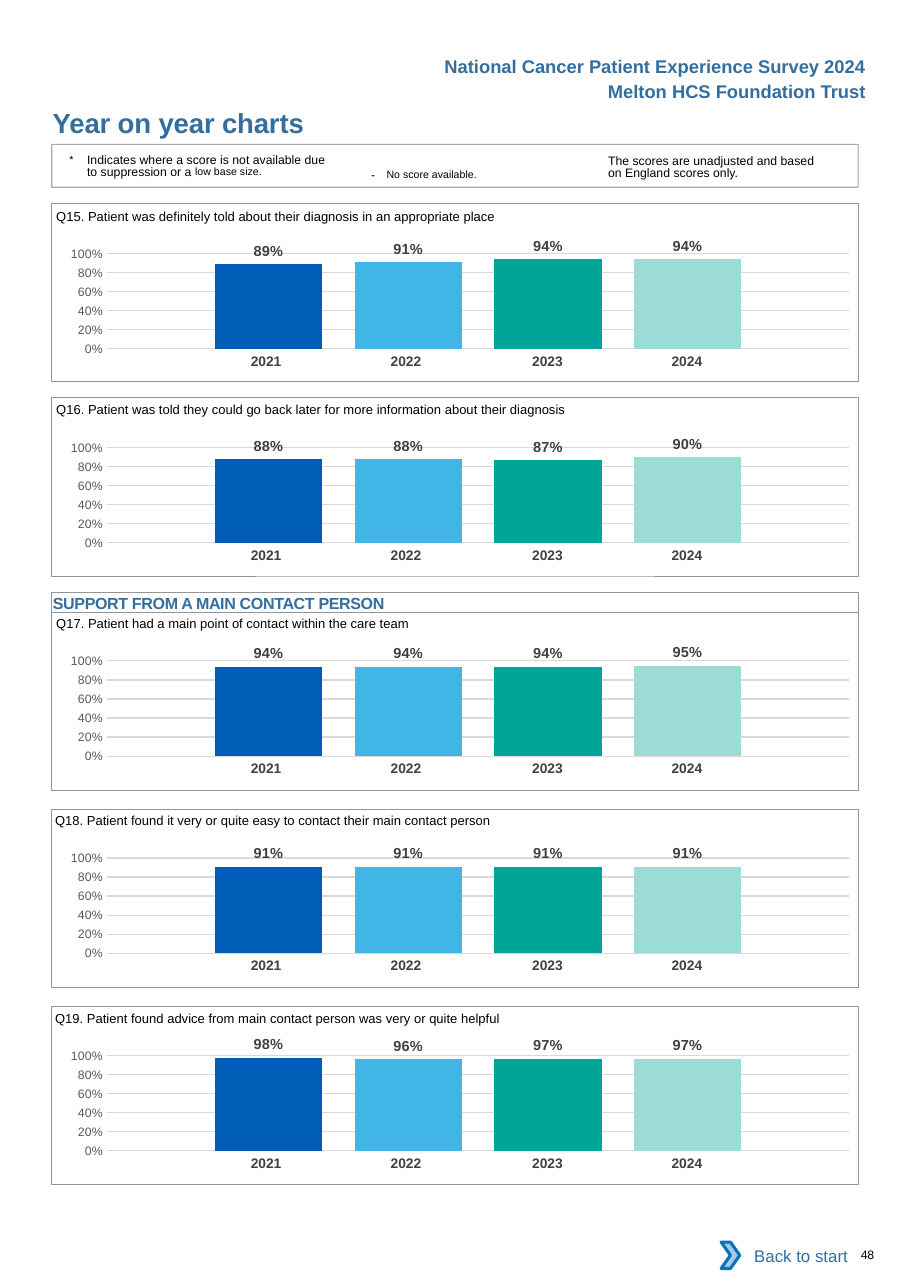
from lxml.etree import SubElement
from pptx import Presentation
from pptx.chart.data import CategoryChartData
from pptx.dml.color import RGBColor
from pptx.enum.chart import XL_CHART_TYPE, XL_LABEL_POSITION, XL_TICK_MARK
from pptx.enum.shapes import MSO_SHAPE
from pptx.enum.text import MSO_ANCHOR, PP_ALIGN
from pptx.oxml import parse_xml
from pptx.oxml.ns import nsdecls, qn
from pptx.util import Pt

COLORS = {
    "heading": "336E9F", "text": "000000", "frame": "939598", "year": "414042",
    "axis": "595959", "label": "404040", "grid": "D9D9D9", "white": "FFFFFF",
    "chevron": "A8C7E9", "chevron line": "0A74BB",
}
YEARS = {"2021": "005EB8", "2022": "41B6E6", "2023": "00A499", "2024": "9CDCD7"}
FRAME_LEFT, FRAME_WIDTH, FRAME_HEIGHT = 33.84, 527, 116.64

deck = Presentation()
deck.slide_width, deck.slide_height = Pt(594.72), Pt(841.68)
page = deck.slides.add_slide(deck.slide_layouts[6])


def write_text(box, runs, insets=(0, 0, 0, 0), color="text", bold=False,
               align=PP_ALIGN.LEFT, spacing=None, hanging=0):
    """Fill a box with one paragraph of (text, size, run attributes)."""
    frame = box.text_frame
    frame.word_wrap = True
    for side, inset in zip(("left", "top", "right", "bottom"), insets):
        setattr(frame, f"margin_{side}", Pt(inset))
    frame.vertical_anchor = MSO_ANCHOR.TOP
    para = frame.paragraphs[0]
    para.alignment = align
    if spacing:
        para.line_spacing = Pt(spacing)
    if hanging:
        properties = para._p.get_or_add_pPr()
        properties.set("marL", str(Pt(hanging)))
        properties.set("indent", str(-Pt(hanging)))
    for text, size, attributes in runs:
        span = para.add_run()
        span.text = text
        for name, value in {"name": "Arial", "size": Pt(size), "bold": bold}.items():
            setattr(span.font, name, value)
        span.font.color.rgb = RGBColor.from_string(COLORS[color])
        for name, value in attributes.items():
            span._r.get_or_add_rPr().set(name, str(value))


def add_frame(left, top, width, height, kind=MSO_SHAPE.RECTANGLE,
              fill=None, line="frame", weight=0.5):
    shape = page.shapes.add_shape(kind, Pt(left), Pt(top), Pt(width), Pt(height))
    shape.shadow.inherit = False
    if fill:
        shape.fill.solid()
        shape.fill.fore_color.rgb = RGBColor.from_string(COLORS[fill])
    else:
        shape.fill.background()
    if line:
        shape.line.color.rgb = RGBColor.from_string(COLORS[line])
        shape.line.width = Pt(weight)
    else:
        shape.line.fill.background()
    return shape


# Question panels: text, left, question top, frame top, chart top, scores
panels = [
    ("Q15. Patient was definitely told about their diagnosis in an appropriate place",
     36.7, 129.6, 132.8, 151.9, (0.89, 0.91, 0.94, 0.94)),
    ("Q16. Patient was told they could go back later for more information about their diagnosis",
     36.7, 255.6, 259.8, 278.6, (0.88, 0.88, 0.87, 0.9)),
    ("Q17. Patient had a main point of contact within the care team",
     36.7, 395.6, 400, 418, (0.94, 0.94, 0.94, 0.95)),
    ("Q18. Patient found it very or quite easy to contact their main contact person",
     36, 524.2, 528.9, 546.8, (0.91, 0.91, 0.91, 0.91)),
    ("Q19. Patient found advice from main contact person was very or quite helpful",
     36, 653.8, 657.4, 676, (0.98, 0.96, 0.97, 0.97)),
]
for question, left, question_top, frame_top, chart_top, scores in panels:
    # Year labels under the columns
    table = page.shapes.add_table(1, len(YEARS), Pt(124.6), Pt(chart_top + 75.6),
                                  Pt(370.8), Pt(19.4)).table
    table.first_row = table.horz_banding = False
    table.rows[0].height = Pt(19.4)
    year_columns = zip(YEARS, (91.4, 91.4, 96.5, 91.4), (0, 0, 2.9, 8.6))
    for index, (year, width, right_inset) in enumerate(year_columns):
        table.columns[index].width = Pt(width)
        cell = table.cell(0, index)
        cell.fill.background()
        write_text(cell, [(year, 9, {})], color="year", bold=True, align=PP_ALIGN.CENTER)
        cell.margin_left, cell.margin_right = Pt(7.2), Pt(right_inset)
        cell.margin_top = cell.margin_bottom = Pt(3.6)

    # Column chart
    chart_data = CategoryChartData(number_format="0%")
    chart_data.categories = ["1"]
    for index, score in enumerate(scores, 1):
        chart_data.add_series(f"Series {index}", [score])
    chart = page.shapes.add_chart(XL_CHART_TYPE.COLUMN_CLUSTERED, Pt(28.1), Pt(chart_top),
                                  Pt(FRAME_WIDTH), Pt(92.9), chart_data).chart
    chart.has_title = chart.has_legend = False
    chart.font.name, chart.font.size = "Calibri", Pt(10)
    chart.font.color.rgb = RGBColor.from_string(COLORS["text"])
    chart.category_axis.visible = False
    axis = chart.value_axis
    axis_format = {"minimum_scale": 0, "maximum_scale": 1, "major_unit": 0.2,
                   "major_tick_mark": XL_TICK_MARK.NONE, "minor_tick_mark": XL_TICK_MARK.NONE}
    for name, value in axis_format.items():
        setattr(axis, name, value)
    axis.format.line.fill.background()
    axis.major_gridlines.format.line.color.rgb = RGBColor.from_string(COLORS["grid"])
    axis.major_gridlines.format.line.width = Pt(0.75)

    plot = chart.plots[0]
    plot.vary_by_categories = False
    plot.gap_width, plot.overlap = 200, -30
    plot.has_data_labels = True
    plot.data_labels.show_value = True
    plot.data_labels.position = XL_LABEL_POSITION.OUTSIDE_END
    for labels, size, color, bold in ((axis.tick_labels, 8, "axis", False),
                                      (plot.data_labels, 9.5, "label", True)):
        labels.number_format, labels.number_format_is_linked = "0%", False
        for name, value in {"name": "Arial", "size": Pt(size), "bold": bold}.items():
            setattr(labels.font, name, value)
        labels.font.color.rgb = RGBColor.from_string(COLORS[color])
    for series, color in zip(plot.series, YEARS.values()):
        series.format.fill.solid()
        series.format.fill.fore_color.rgb = RGBColor.from_string(color)

    # Fixed plot area inside the chart
    plot_area = chart._chartSpace.chart.plotArea
    for old_layout in plot_area.findall(qn("c:layout")):
        plot_area.remove(old_layout)
    layout = parse_xml(f"<c:layout {nsdecls('c')}><c:manualLayout/></c:layout>")
    for name, value in {"layoutTarget": "inner", "xMode": "edge", "yMode": "edge",
                        "x": 0.08, "y": 0.15, "w": 0.92, "h": 0.67}.items():
        SubElement(layout[0], qn(f"c:{name}")).set("val", str(value))
    plot_area.insert(0, layout)

    # Frame and question
    add_frame(FRAME_LEFT, frame_top, FRAME_WIDTH, FRAME_HEIGHT)
    box = page.shapes.add_textbox(Pt(left), Pt(question_top), Pt(500), Pt(17.3))
    write_text(box, [(question, 8.5, {})], insets=(0, 6.5, 0, 0))

# Section heading
section = add_frame(FRAME_LEFT, 387.4, FRAME_WIDTH, 12.9)
write_text(section, [("SUPPORT FROM A MAIN CONTACT PERSON", 10.5, {"spc": -20})],
           insets=(0.7, 0.7, 0, 0), color="heading", bold=True)

# Key to the scores
key_frame = add_frame(FRAME_LEFT, 94.3, FRAME_WIDTH, 28.1, weight=0.75)
line_color = key_frame.line._ln.find(".//" + qn("a:srgbClr"))
SubElement(line_color, qn("a:alpha")).set("val", "80000")
raised = {"baseline": 3000}
notes = [
    (45.4, 99.4, 171, 20, [
        ("*\t", 12, raised),
        ("Indicates where a score is not available due to suppression or a ", 8, {}),
        ("low base size.", 12, {"baseline": 7000})],
     {"insets": (0, 2.2, 0, 0), "spacing": 8.1, "hanging": 11.5}),
    (235.4, 101.5, 132, 17.3, [("- ", 8, {"spc": 260}), ("No score available.", 12, raised)],
     {"insets": (7.2, 3.6, 7.2, 3.6)}),
    (397.4, 99.4, 142, 19.4,
     [("The scores are unadjusted and based on England scores only.", 8, {})],
     {"insets": (0, 2.2, 0, 0), "spacing": 8.1}),
]

# Page headings and page number
header = {"insets": (7.2, 3.6, 7.2, 3.6), "color": "heading", "bold": True,
          "align": PP_ALIGN.RIGHT}
headings = [
    (253, 32.6, 320, 21.6, [("National Cancer Patient Experience Survey 2024", 12, {})], header),
    (253, 49, 320, 21.6, [("Melton HCS Foundation Trust", 12, {})], header),
    (34.5, 69.1, 324, 21.6, [("Year on year charts", 18, {"spc": -10})],
     {"color": "heading", "bold": True}),
    (557.7, 815.3, 34, 9.4, [("48", 8, {"spc": -20})], {"insets": (5, 0, 0, 0)}),
]
for left, top, width, height, runs, text_format in notes + headings:
    box = page.shapes.add_textbox(Pt(left), Pt(top), Pt(width), Pt(height))
    write_text(box, runs, **text_format)

# Back to start button
button = add_frame(476.3, 805.2, 85, 30.2, fill="white", line=None)
write_text(button, [("Back to start", 11, {})], insets=(7.2, 3.6, 7.2, 3.6),
           color="heading", align=PP_ALIGN.RIGHT)
button.text_frame.vertical_anchor = MSO_ANCHOR.MIDDLE
add_frame(471.3, 811.7, 12.2, 17.3, MSO_SHAPE.CHEVRON, "chevron", "chevron line", 2)

deck.save("out.pptx")
